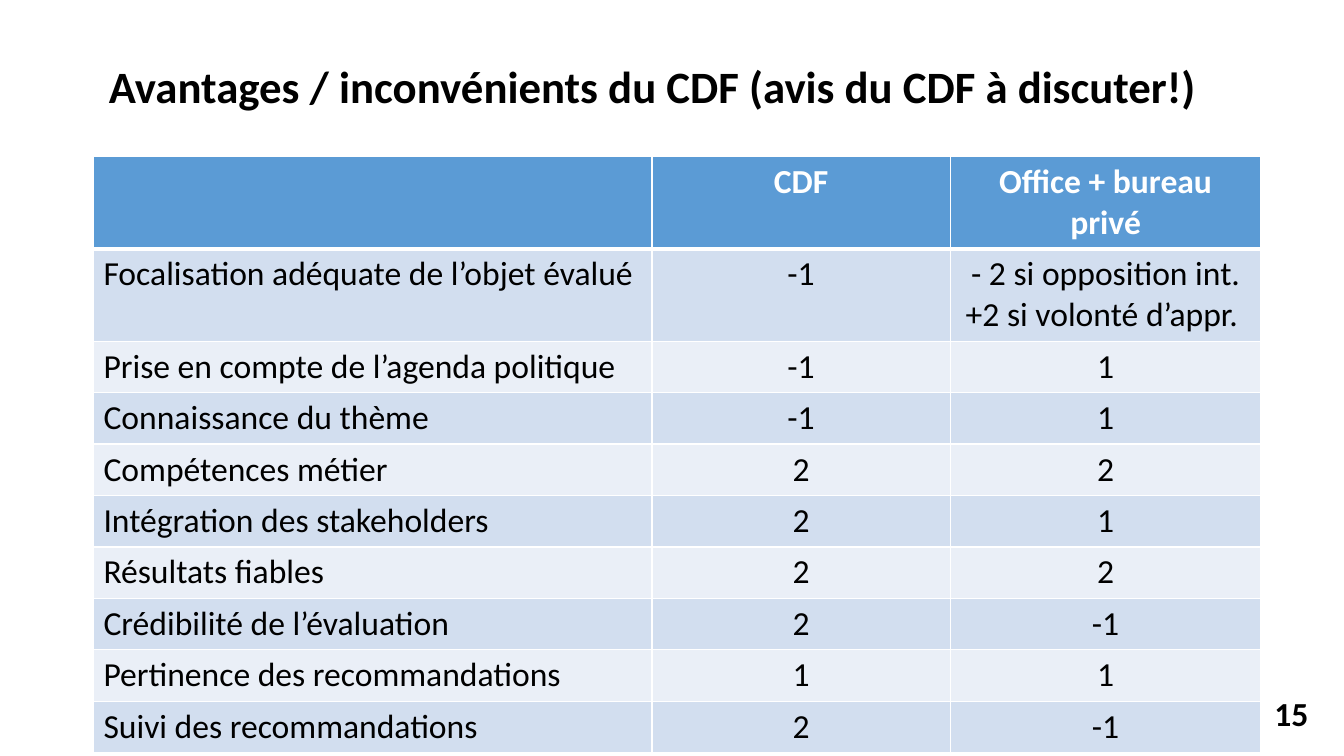
import pptx
import pptx.util
from lxml import etree
from pptx.dml.color import RGBColor
from pptx.enum.text import MSO_ANCHOR, MSO_AUTO_SIZE, PP_ALIGN
from pptx.oxml.ns import qn

PX = 9525
BLACK = RGBColor(0x00, 0x00, 0x00)
WHITE = RGBColor(0xFF, 0xFF, 0xFF)
HEADER_BLUE = RGBColor(0x5B, 0x9B, 0xD5)
BAND_BLUES = [RGBColor(0xD2, 0xDE, 0xEF), RGBColor(0xEA, 0xEF, 0xF7)]

COLUMN_WIDTHS = [532, 284, 296]
ROW_HEIGHTS = [88, 88] + [49] * 8
ROWS = [
    ("", "CDF", "Office + bureau privé"),
    ("Focalisation adéquate de l’objet évalué", "-1",
     "- 2 si opposition int.\v+2 si volonté d’appr. "),
    ("Prise en compte de l’agenda politique", "-1", "1"),
    ("Connaissance du thème", "-1", "1"),
    ("Compétences métier", "2", "2"),
    ("Intégration des stakeholders", "2", "1"),
    ("Résultats fiables", "2", "2"),
    ("Crédibilité de l’évaluation", "2", "-1"),
    ("Pertinence des recommandations", "1", "1"),
    ("Suivi des recommandations", "2", "-1"),
]


def format_paragraph(para, size, color, bold, align):
    para.alignment = align
    para.font.name = "Calibri"
    para.font.size = pptx.util.Pt(size)
    para.font.bold = bold
    para.font.color.rgb = color


def add_border(cell, side, points):
    """Add a white border; call for L, R, T, B in that order, before the fill."""
    line = etree.SubElement(cell._tc.get_or_add_tcPr(), qn(f"a:ln{side}"),
                            w=str(pptx.util.Pt(points)))
    fill = etree.SubElement(line, qn("a:solidFill"))
    etree.SubElement(fill, qn("a:srgbClr"), val=str(WHITE))


deck = pptx.Presentation()
deck.slide_width, deck.slide_height = 1280 * PX, 720 * PX
page = deck.slides.add_slide(deck.slide_layouts[5])

title = page.shapes.title
title.left, title.top, title.width, title.height = 94 * PX, 57 * PX, 1096 * PX, 76 * PX
title.text_frame.text = "Avantages / inconvénients du CDF (avis du CDF à discuter!)"
title.text_frame.vertical_anchor = MSO_ANCHOR.TOP
title.text_frame.auto_size = MSO_AUTO_SIZE.NONE
title.text_frame.paragraphs[0].line_spacing = 0.9
format_paragraph(title.text_frame.paragraphs[0], 32, BLACK, True, PP_ALIGN.LEFT)

table = page.shapes.add_table(len(ROWS), len(COLUMN_WIDTHS), 89 * PX, 149 * PX,
                              sum(COLUMN_WIDTHS) * PX, sum(ROW_HEIGHTS) * PX).table
for column, width in zip(table.columns, COLUMN_WIDTHS):
    column.width = width * PX
for row, height in zip(table.rows, ROW_HEIGHTS):
    row.height = height * PX

for row_index, texts in enumerate(ROWS):
    is_header = row_index == 0
    for column_index, text in enumerate(texts):
        cell = table.cell(row_index, column_index)
        cell.text = text
        format_paragraph(cell.text_frame.paragraphs[0], 24,
                         WHITE if is_header else BLACK, is_header,
                         PP_ALIGN.CENTER if column_index else PP_ALIGN.LEFT)
        top = 3 if row_index == 1 else 1
        bottom = 3 if is_header else 1
        for side, points in zip("LRTB", (1, 1, top, bottom)):
            add_border(cell, side, points)
        cell.fill.solid()
        cell.fill.fore_color.rgb = HEADER_BLUE if is_header else BAND_BLUES[(row_index - 1) % 2]

page_number = page.shapes.add_textbox(1186 * PX, 661 * PX, 88 * PX, 36 * PX)
page_number.text_frame.word_wrap = True
page_number.text_frame.vertical_anchor = MSO_ANCHOR.MIDDLE
page_number.text_frame.text = "15"
format_paragraph(page_number.text_frame.paragraphs[0], 24, BLACK, True, PP_ALIGN.CENTER)

deck.save("out.pptx")
